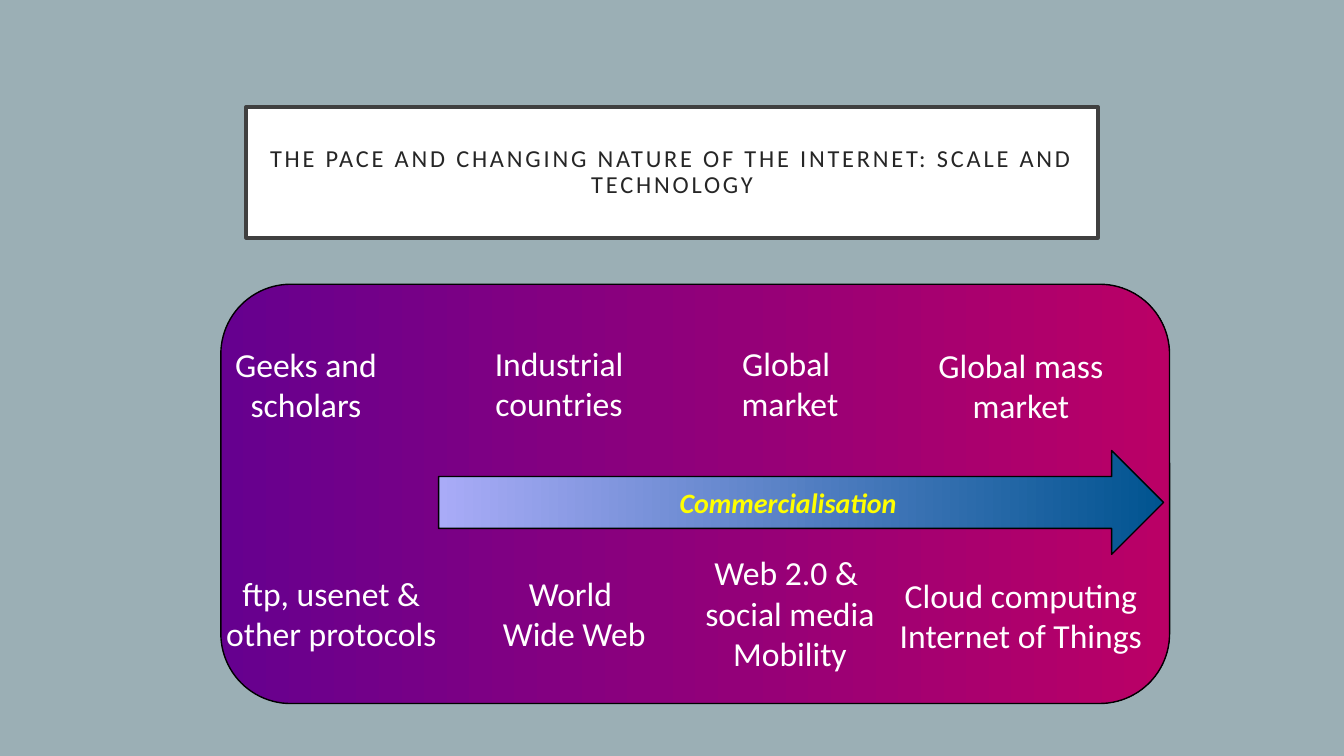
from dataclasses import dataclass

from pptx import Presentation
from pptx.dml.color import RGBColor
from pptx.enum.shapes import MSO_SHAPE
from pptx.enum.text import MSO_ANCHOR, MSO_AUTO_SIZE, PP_ALIGN
from pptx.util import Inches, Pt

HEADING = "THE PACE AND CHANGING NATURE OF THE INTERNET: SCALE AND TECHNOLOGY"
TREND = "Commercialisation"
AUDIENCES = [
    ("Geeks and scholars", 2.11, 3.36, 1.85, 1.3),
    ("Industrial countries", 4.35, 3.35, 2.39, 0.9),
    ("Global \nmarket", 6.64, 3.35, 2.39, 1.07),
    ("Global mass market", 8.93, 3.37, 2.39, 1.07),
]
TECHNOLOGIES = [
    ("ftp, usenet & other protocols", 2.09, 5.63, 2.39, 1.3),
    ("World \nWide Web", 4.5, 5.63, 2.39, 0.9),
    ("Web 2.0 & \nsocial media\nMobility", 6.47, 5.43, 2.73, 1.3),
    ("Cloud computing\nInternet of Things", 8.76, 5.65, 2.73, 1.7),
]


@dataclass(frozen=True)
class Theme:
    font: str = "Calibri"
    background: str = "9BAFB5"
    heading_fill: str = "FFFFFF"
    heading_line: str = "404040"
    heading_text: str = "262626"
    label_text: str = "FFFFFF"
    trend_text: str = "FFFF00"
    outline: str = "000000"
    panel: tuple = ("66008F", "BA0066")
    arrow: tuple = ("A9ABF7", "005490")
    heading_size: float = 17.4
    label_size: float = 24
    trend_size: float = 20


THEME = Theme()


def colour(code):
    return RGBColor.from_string(code)


def box(*lengths):
    return [Inches(length) for length in lengths]


def set_line(shape, code, width):
    shape.line.color.rgb = colour(code)
    shape.line.width = Pt(width)


def write(shape, text, size, code, bold=False, italic=False):
    frame = shape.text_frame
    frame.word_wrap = True
    frame.text = text
    for paragraph in frame.paragraphs:
        paragraph.alignment = PP_ALIGN.CENTER
        for run in paragraph.runs:
            font = run.font
            font.name = THEME.font
            font.size = Pt(size)
            font.color.rgb = colour(code)
            font.bold = bold
            font.italic = italic
    return frame


def add_gradient_shape(slide, preset, place, stops):
    shape = slide.shapes.add_shape(preset, *box(*place))
    shape.shadow.inherit = False
    shape.fill.gradient()
    shape.fill.gradient_angle = 0
    for stop, position, code in zip(shape.fill.gradient_stops, (0, 1), stops):
        stop.position = position
        stop.color.rgb = colour(code)
    set_line(shape, THEME.outline, 1)
    return shape


def add_heading(slide):
    heading = slide.shapes.title
    heading.left, heading.top, heading.width, heading.height = box(2.44, 1.06, 8.45, 1.3)
    heading.fill.solid()
    heading.fill.fore_color.rgb = colour(THEME.heading_fill)
    set_line(heading, THEME.heading_line, 2.5)
    frame = write(heading, HEADING, THEME.heading_size, THEME.heading_text)
    frame.auto_size = MSO_AUTO_SIZE.NONE
    frame.vertical_anchor = MSO_ANCHOR.MIDDLE
    frame.margin_left = frame.margin_right = Inches(0.2)
    frame.margin_top = frame.margin_bottom = Inches(0.2)
    paragraph = frame.paragraphs[0]
    paragraph.line_spacing = 0.9
    paragraph.runs[0].font._element.set("spc", "200")


def add_labels(slide, labels):
    for text, *place in labels:
        label = slide.shapes.add_textbox(*box(*place))
        frame = write(label, text, THEME.label_size, THEME.label_text)
        frame.auto_size = MSO_AUTO_SIZE.SHAPE_TO_FIT_TEXT


def main():
    deck = Presentation()
    deck.slide_width, deck.slide_height = box(13.33, 7.5)
    slide = deck.slides.add_slide(deck.slide_layouts[5])
    slide.background.fill.solid()
    slide.background.fill.fore_color.rgb = colour(THEME.background)

    add_heading(slide)
    add_gradient_shape(slide, MSO_SHAPE.ROUNDED_RECTANGLE, (2.19, 2.82, 9.41, 4.16), THEME.panel)
    arrow = add_gradient_shape(slide, MSO_SHAPE.RIGHT_ARROW, (4.35, 4.47, 7.19, 1.03), THEME.arrow)
    trend = write(arrow, TREND, THEME.trend_size, THEME.trend_text, bold=True, italic=True)
    trend.vertical_anchor = MSO_ANCHOR.MIDDLE
    add_labels(slide, AUDIENCES)
    add_labels(slide, TECHNOLOGIES)
    deck.save("out.pptx")


if __name__ == "__main__":
    main()
